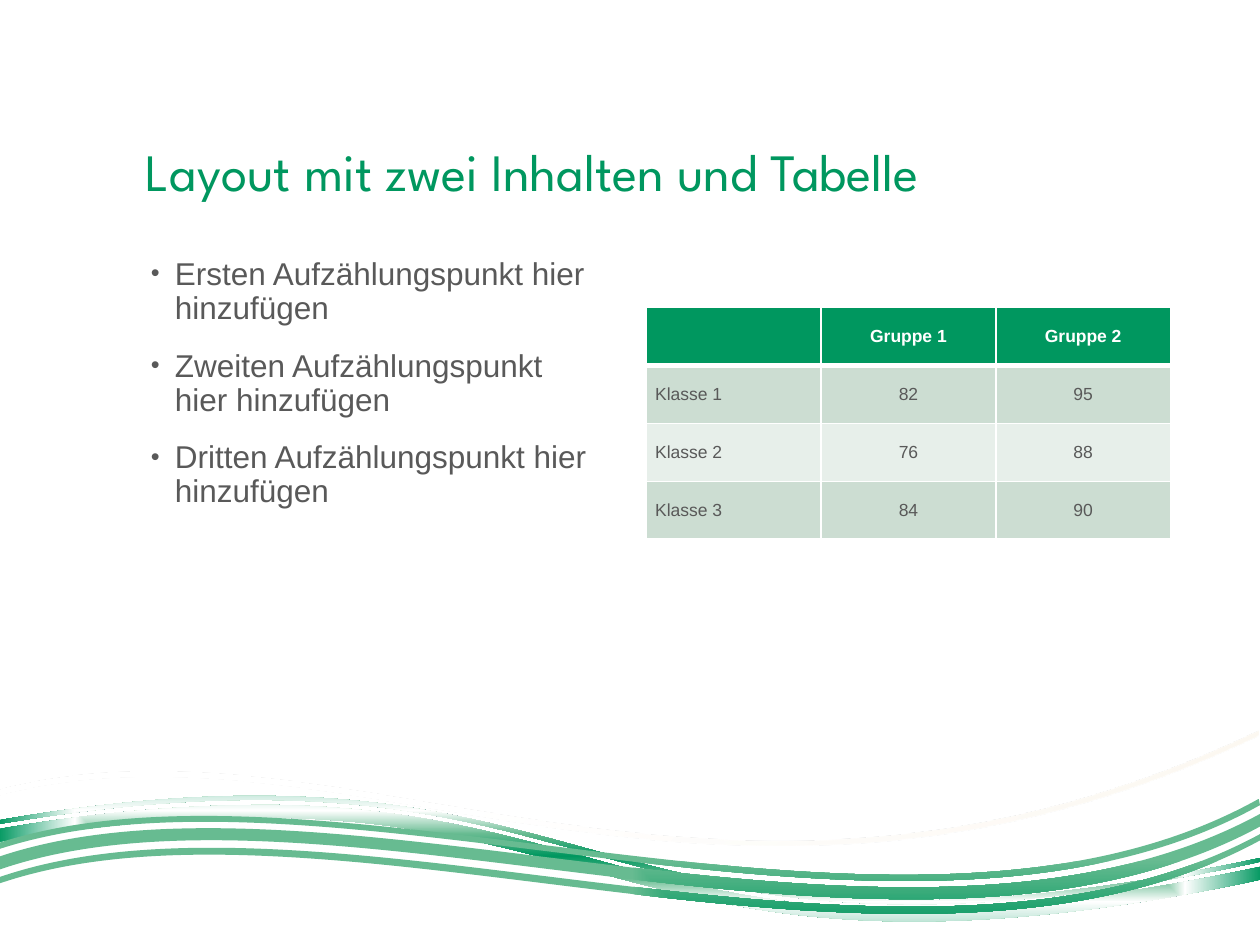
from dataclasses import dataclass
from math import cos, radians, sin
from typing import Any

from pptx import Presentation
from pptx.dml.color import RGBColor
from pptx.enum.text import MSO_ANCHOR as Anchor, PP_ALIGN as Align
from pptx.oxml import parse_xml
from pptx.oxml.ns import nsdecls, qn
from pptx.util import Inches, Pt

GREEN, LIGHT_GREEN, WHITE, GREY = "00975F", "67BB91", "FFFFFF", "595959"
BAND_DARK, BAND_LIGHT, CREAM = "CCDDD2", "E7EFEA", "F9EDD7"
TILT = 3.5

Box = tuple[float, float, float, float]
Contour = list[tuple[float, ...]]


@dataclass
class Stop:
    position: int
    colour: str
    alpha: int = 100


@dataclass
class Wave:
    box: Box
    contours: list[Contour]
    stops: list[Stop]
    direction: str


WAVES = [
    Wave(
        (0.01, 6.12, 9.98, 1.35),
        [
            [(2.28, 6.39), (5.02, 6.47, 5.55, 7.83, 10, 6.88), (10.01, 6.98),
             (4.54, 8.14, 4.99, 5.83, -0.01, 6.68), (-0.01, 6.58),
             (0.92, 6.42, 1.66, 6.38, 2.28, 6.39)],
            [(2.28, 6.32), (5.02, 6.4, 5.55, 7.76, 10, 6.81), (10, 6.84),
             (4.53, 8.01, 4.99, 5.69, -0.01, 6.54), (-0.01, 6.51),
             (0.92, 6.35, 1.66, 6.3, 2.28, 6.32)],
        ],
        [Stop(0, GREEN), Stop(18, LIGHT_GREEN), Stop(37, WHITE), Stop(100, GREEN)],
        '<a:path path="shape"><a:fillToRect l="50000" t="50000" r="50000" b="50000"/></a:path>',
    ),
    Wave(
        (0.02, 5.88, 10.01, 1.71),
        [[(9.99, 5.8), (9.99, 5.84), (5.67, 7.89, 2.78, 5.58, -0.01, 6.31),
          (-0.01, 6.27), (2.78, 5.54, 5.67, 7.85, 9.99, 5.8)]],
        [Stop(36, WHITE, 30), Stop(100, CREAM, 48)],
        '<a:lin ang="2700000" scaled="0"/>',
    ),
    Wave(
        (0, 6.25, 10.02, 1.15),
        [
            [(10, 6.62), (10, 6.67), (7.19, 8.2, 2.6, 6.13, 0, 7.01),
             (0, 6.96), (2.6, 6.07, 7.19, 8.14, 10, 6.62)],
            [(10, 6.46), (10, 6.56), (7.19, 8.08, 2.6, 6.01, 0, 6.9),
             (-0.01, 6.8), (2.6, 5.92, 7.18, 7.99, 10, 6.46)],
            [(9.99, 6.34), (10, 6.39), (7.2, 7.95, 2.62, 5.88, -0.01, 6.74),
             (-0.01, 6.69), (2.62, 5.84, 7.2, 7.9, 9.99, 6.34)],
        ],
        [Stop(36, GREEN), Stop(100, LIGHT_GREEN)],
        '<a:path path="rect"><a:fillToRect l="100000" t="100000"/></a:path>',
    ),
]

BULLETS = [f"{ordinal} Aufzählungspunkt hier hinzufügen"
           for ordinal in ("Ersten", "Zweiten", "Dritten")]
SCORES = [
    ("", "Gruppe 1", "Gruppe 2"),
    ("Klasse 1", "82", "95"),
    ("Klasse 2", "76", "88"),
    ("Klasse 3", "84", "90"),
]


def rgb(colour: str) -> RGBColor:
    return RGBColor.from_string(colour)


def apply(target: Any, values: dict[str, Any]) -> None:
    for name, value in values.items():
        setattr(target, name, value)


def style_font(font: Any, colour: str, **values: Any) -> None:
    apply(font, values)
    font.color.rgb = rgb(colour)


def level_point(x: float, y: float, box: Box) -> str:
    left, top, width, height = box
    dx, dy = x - left - width / 2, y - top - height / 2
    angle = radians(TILT)
    across = dx * cos(angle) - dy * sin(angle) + width / 2
    down = dx * sin(angle) + dy * cos(angle) + height / 2
    return f'<a:pt x="{Inches(across)}" y="{Inches(down)}"/>'


def curved_path(wave: Wave) -> Any:
    commands = ""
    for contour in wave.contours:
        for index, segment in enumerate(contour):
            tag = "moveTo" if index == 0 else "cubicBezTo" if len(segment) == 6 else "lnTo"
            points = "".join(level_point(x, y, wave.box)
                             for x, y in zip(segment[::2], segment[1::2]))
            commands += f"<a:{tag}>{points}</a:{tag}>"
        commands += "<a:close/>"
    width, height = map(Inches, wave.box[2:])
    return parse_xml(f'<a:path {nsdecls("a")} w="{width}" h="{height}">{commands}</a:path>')


def gradient(wave: Wave) -> Any:
    stops = "".join(
        f'<a:gs pos="{stop.position * 1000}"><a:srgbClr val="{stop.colour}">'
        f'<a:alpha val="{stop.alpha * 1000}"/></a:srgbClr></a:gs>'
        for stop in wave.stops
    )
    return parse_xml(f'<a:gradFill {nsdecls("a")} rotWithShape="1">'
                     f"<a:gsLst>{stops}</a:gsLst>{wave.direction}</a:gradFill>")


def draw_wave(shapes: Any, wave: Wave) -> None:
    anchors = [(Inches(x), Inches(y)) for *_, x, y in wave.contours[0]]
    builder = shapes.build_freeform(*anchors[0], scale=1.0)
    builder.add_line_segments(anchors[1:], close=True)
    ribbon = builder.convert_to_shape()
    apply(ribbon, dict(zip(("left", "top", "width", "height"), map(Inches, wave.box))))
    ribbon.rotation = 360 - TILT
    ribbon.shadow.inherit = False
    ribbon.line.fill.background()
    ribbon.fill.background()
    properties = ribbon._element.spPr
    properties.replace(properties.find(qn("a:noFill")), gradient(wave))
    paths = properties.find(qn("a:custGeom")).find(qn("a:pathLst"))
    paths.replace(paths[0], curved_path(wave))


def add_text(shapes: Any, box: Box, lines: list[str], anchor: Any,
             colour: str, bulleted: bool = False, **font: Any) -> None:
    frame = shapes.add_textbox(*map(Inches, box)).text_frame
    apply(frame, {"word_wrap": True, "vertical_anchor": anchor})
    for index, line in enumerate(lines):
        paragraph = frame.add_paragraph() if index else frame.paragraphs[0]
        if bulleted:
            properties = paragraph._p.get_or_add_pPr()
            properties.set("marL", str(Inches(0.23)))
            properties.set("indent", str(Inches(-0.19)))
            for tag in ('buSzPct val="80000"', 'buFont typeface="Arial"', 'buChar char="•"'):
                properties.append(parse_xml(f'<a:{tag} {nsdecls("a")}/>'))
        apply(paragraph, {"line_spacing": 0.9, "space_before": Pt(13.5 if index else 0)})
        run = paragraph.add_run()
        run.text = line
        style_font(run.font, colour, **font)


def add_borders(cell: Any, widths: dict[str, int]) -> None:
    properties = cell._tc.get_or_add_tcPr()
    for position, (side, width) in enumerate(widths.items()):
        properties.insert(position, parse_xml(
            f'<a:ln{side} {nsdecls("a")} w="{Pt(width)}"><a:solidFill>'
            f'<a:srgbClr val="{WHITE}"/></a:solidFill></a:ln{side}>'))


def add_scores(shapes: Any) -> None:
    table = shapes.add_table(len(SCORES), len(SCORES[0]), Inches(5.13), Inches(2.44),
                             Inches(4.16), Inches(1.84)).table
    apply(table, {"first_row": True, "horz_banding": False})
    for row, values in enumerate(SCORES):
        header = row == 0
        fill = GREEN if header else BAND_DARK if row % 2 else BAND_LIGHT
        for column, value in enumerate(values):
            cell = table.cell(row, column)
            apply(cell, {
                "text": value, "vertical_anchor": Anchor.MIDDLE,
                "margin_left": Inches(0.07), "margin_right": Inches(0.07),
                "margin_top": Inches(0.04), "margin_bottom": Inches(0.04),
            })
            cell.fill.solid()
            cell.fill.fore_color.rgb = rgb(fill)
            add_borders(cell, {"L": 1, "R": 1, "T": 1, "B": 3} if header
                        else {"L": 1, "R": 1, "B": 1})
            paragraph = cell.text_frame.paragraphs[0]
            paragraph.alignment = Align.CENTER if column else Align.LEFT
            style_font(paragraph.runs[0].font if value else paragraph.font,
                       WHITE if header else GREY, name="Arial", size=Pt(10), bold=header)


def main() -> None:
    deck = Presentation()
    apply(deck, {"slide_width": Inches(10), "slide_height": Inches(7.5)})
    shapes = deck.slides.add_slide(deck.slide_layouts[6]).shapes
    for wave in WAVES:
        draw_wave(shapes, wave)
    add_text(shapes, (1.06, 0.33, 7.88, 1.33), ["Layout mit zwei Inhalten und Tabelle"],
             Anchor.BOTTOM, GREEN, name="League Spartan", size=Pt(30))
    add_text(shapes, (1.06, 2, 3.81, 4.33), BULLETS, Anchor.TOP, GREY,
             bulleted=True, name="Arial", size=Pt(18))
    add_scores(shapes)
    deck.save("out.pptx")


if __name__ == "__main__":
    main()
